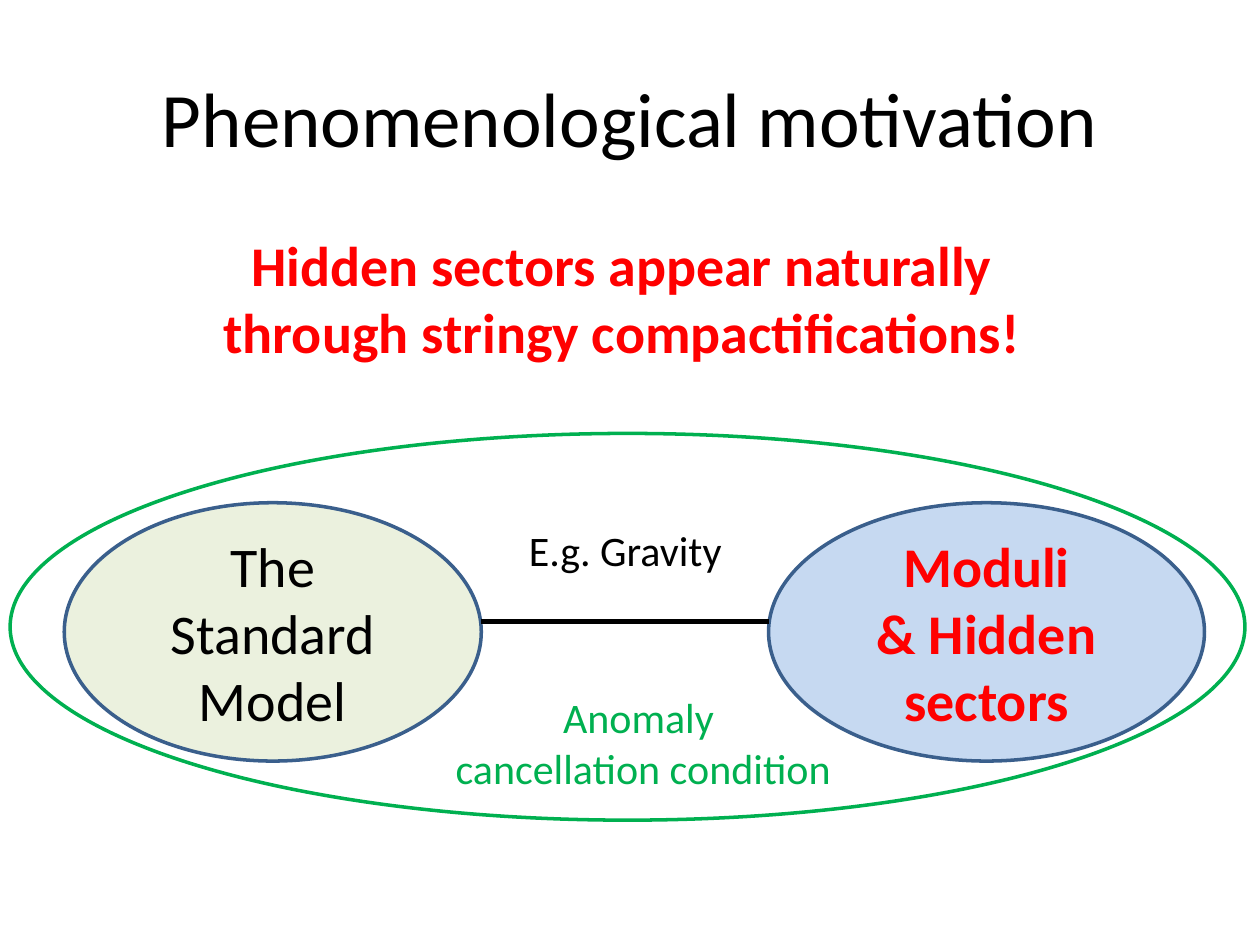
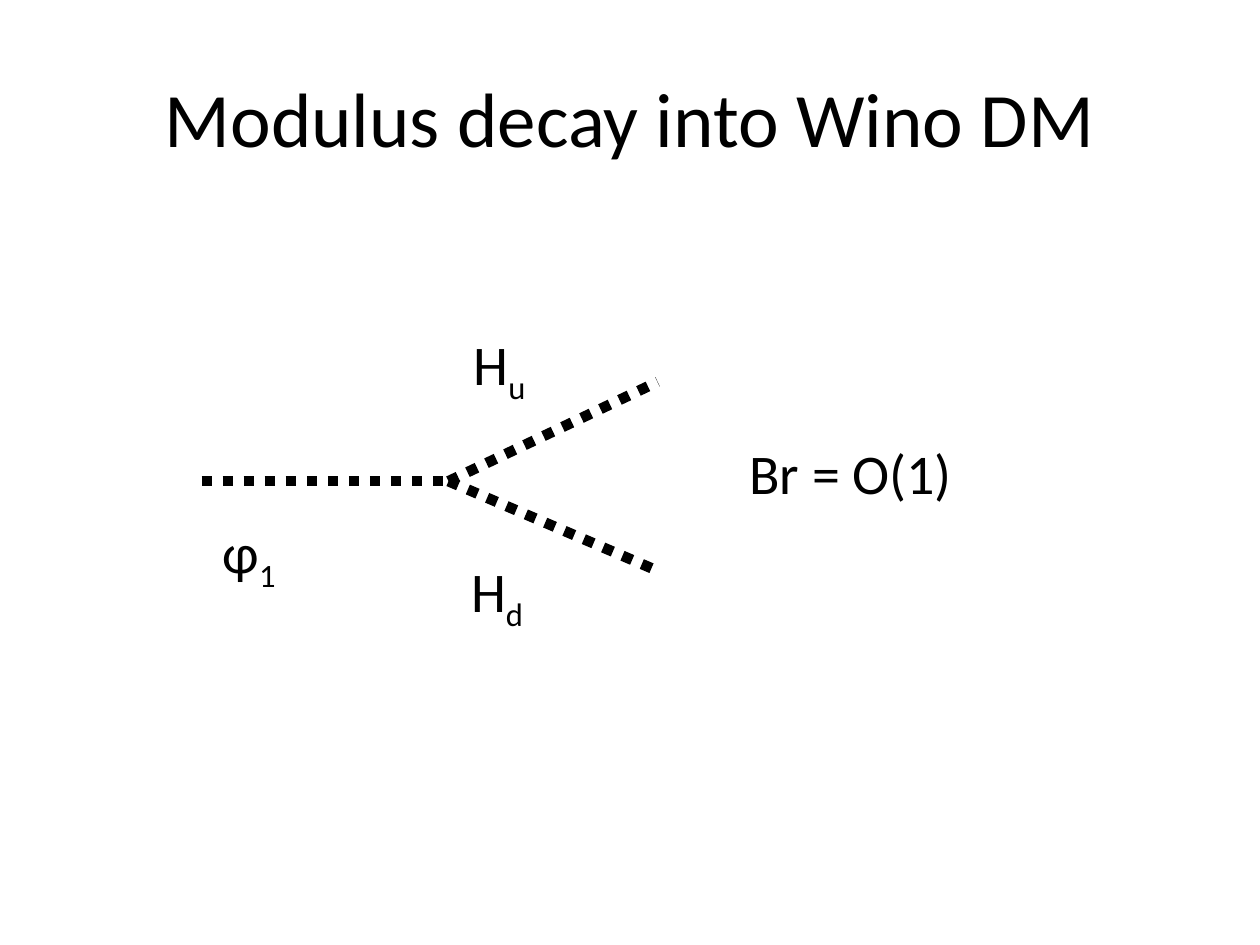
import pptx
import pptx.util
import pptx.dml.color
import pptx.enum.dml
import pptx.enum.shapes
import pptx.enum.text
import pptx.oxml.ns
import lxml.etree

Pt = pptx.util.Pt
ALIGN = pptx.enum.text.PP_ALIGN
MIDDLE = pptx.enum.text.MSO_ANCHOR.MIDDLE
DOTTED = pptx.enum.dml.MSO_LINE.ROUND_DOT  # stored as sysDot

COLORS = {
    "text": "000000",
    "accent": "FF0000",
    "condition": "00B050",
    "outline": "3A5F8C",
    "visible": "EBF1DE",
    "hidden": "C6D9F1",
}


class Deck:
    """Holds the shared style and the current slide."""

    font = "Calibri"
    title_size, body_size, label_size = 44, 32, 24

    def __init__(self):
        self.prs = pptx.Presentation()
        self.prs.slide_width, self.prs.slide_height = Pt(720), Pt(540)
        self.s = None

    def color(self, name):
        return pptx.dml.color.RGBColor.from_string(COLORS[name])

    def add_lines(self, tf, lines, size, color="text", bold=False, align=ALIGN.CENTER):
        """Each line is a list of runs; a run starting with _ is a subscript."""
        for i, runs in enumerate(lines):
            p = tf.paragraphs[0] if i == 0 else tf.add_paragraph()
            p.alignment = align
            for text in runs:
                r = p.add_run()
                r.text = text.removeprefix("_")
                r.font.name, r.font.size, r.font.bold = self.font, Pt(size), bold
                r.font.color.rgb = self.color(color)
                if text.startswith("_"):
                    r.font._element.set("baseline", "-25000")

    def slide(self, title):
        self.s = self.prs.slides.add_slide(self.prs.slide_layouts[5])
        sp = self.s.shapes.title
        sp.left, sp.top, sp.width, sp.height = Pt(36), Pt(21.6), Pt(648), Pt(90)
        sp.text_frame.vertical_anchor = MIDDLE
        self.add_lines(sp.text_frame, [[title]], self.title_size)

    def text(self, x, y, w, h, lines, size=body_size, **style):
        sp = self.s.shapes.add_textbox(Pt(x), Pt(y), Pt(w), Pt(h))
        tf = sp.text_frame
        tf.word_wrap = False
        tf.auto_size = pptx.enum.text.MSO_AUTO_SIZE.SHAPE_TO_FIT_TEXT
        self.add_lines(tf, lines, size, **style)

    def ellipse(self, x, y, w, h, fill=None, line="outline", lines=(), **style):
        sp = self.s.shapes.add_shape(
            pptx.enum.shapes.MSO_SHAPE.OVAL, Pt(x), Pt(y), Pt(w), Pt(h))
        sp.shadow.inherit = False
        if fill:
            sp.fill.solid()
            sp.fill.fore_color.rgb = self.color(fill)
        else:
            sp.fill.background()
        sp.line.color.rgb, sp.line.width = self.color(line), Pt(2)
        sp.text_frame.word_wrap = True
        sp.text_frame.vertical_anchor = MIDDLE
        self.add_lines(sp.text_frame, lines, self.body_size, **style)

    def line(self, start, end, width, dash=None):
        sp = self.s.shapes.add_connector(
            pptx.enum.shapes.MSO_CONNECTOR.STRAIGHT,
            *(Pt(v) for v in (*start, *end)))
        sp.line.color.rgb, sp.line.width = self.color("text"), Pt(width)
        if dash:
            sp.line.dash_style = dash
        lxml.etree.SubElement(sp._element.spPr, pptx.oxml.ns.qn("a:effectLst"))


def motivation(deck):
    deck.slide("Phenomenological motivation")

    # Two sectors inside one compactification
    top, height = 287.3, 147.6
    deck.ellipse(36.7, top, 238.3, height, "visible", lines=[["The Standard Model"]])
    deck.ellipse(439.2, top, 249.1, height, "hidden",
                 lines=[["Moduli"], ["& Hidden sectors"]], color="accent", bold=True)
    deck.ellipse(5.8, 247.7, 705.6, 221, line="condition")

    # Link between the sectors
    deck.line((275, 355), (439.2, 355), 3)
    deck.text(294.5, 295.9, 131, 36, [["E.g. Gravity "]], deck.label_size)
    deck.text(252, 391.7, 231.1, 65.5, [["Anomaly "], ["cancellation condition"]],
              deck.label_size, color="condition")

    # Key statement
    deck.text(118.1, 128.2, 474.5, 85,
              [["Hidden sectors appear naturally"],
               ["through stringy compactifications!"]], color="accent", bold=True)


def modulus_decay(deck):
    deck.slide("Modulus decay into Wino DM")

    # Decay diagram: three legs meeting at one vertex
    vertex = (256.3, 275)
    for end in ((115.2, 275), (375.8, 218.2), (375.8, 326.2)):
        start, stop = sorted((vertex, end))
        deck.line(start, stop, 6, DOTTED)

    # Particle labels and branching ratio
    for x, y, w, runs in (
        (120.2, 292.3, 46.8, ["φ", "_1"]),
        (263.5, 185, 46.1, ["H", "_u"]),
        (262.1, 314.6, 51.1, ["H", "_d"]),
        (421.2, 247, 131.8, ["Br = O(1)"]),
    ):
        deck.text(x, y, w, 46.1, [runs], align=ALIGN.LEFT)


def main():
    deck = Deck()
    motivation(deck)
    modulus_decay(deck)
    deck.prs.save("out.pptx")


if __name__ == "__main__":
    main()
